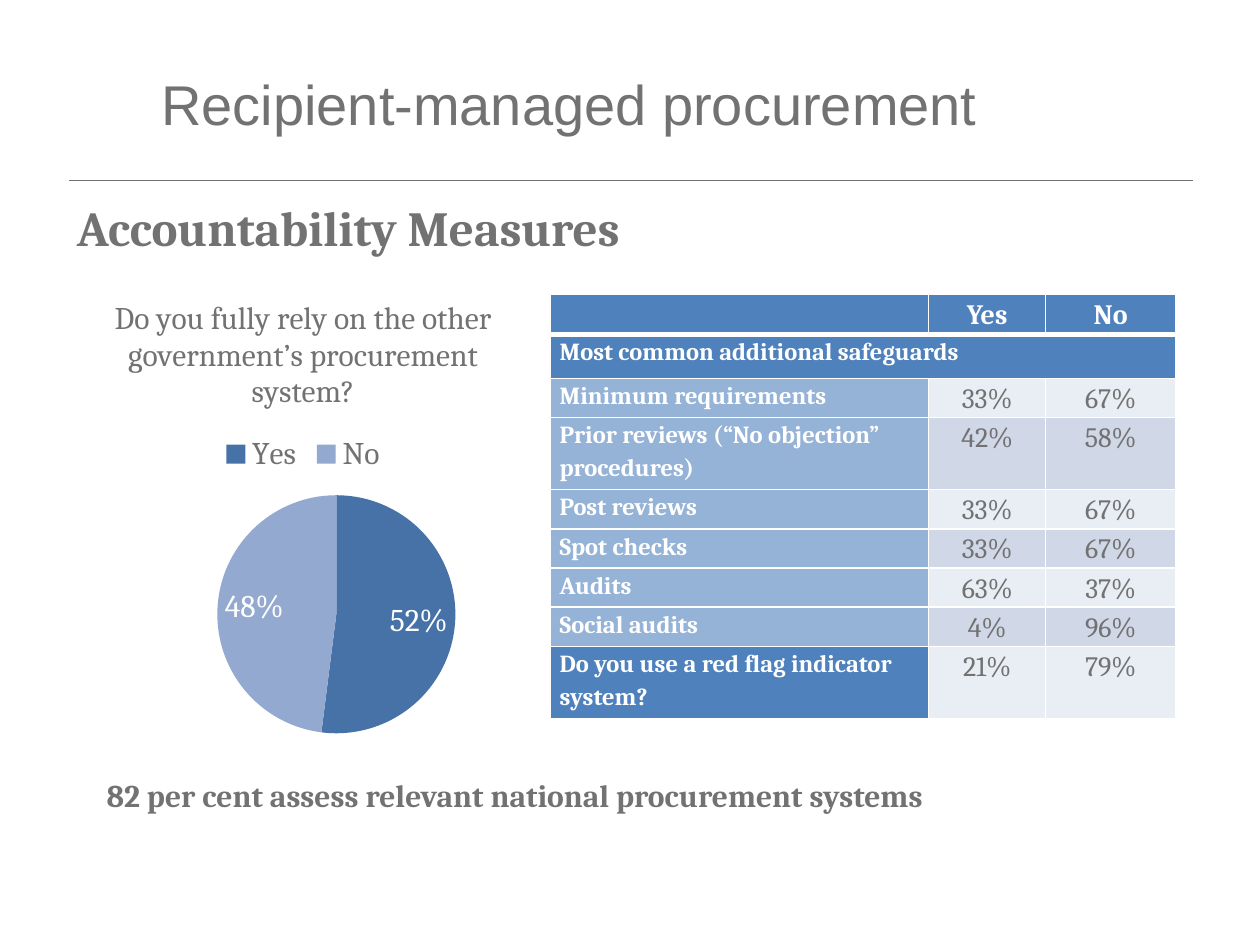
from lxml import etree
from pptx import Presentation
from pptx.chart.data import CategoryChartData
from pptx.dml.color import RGBColor
from pptx.enum.chart import XL_CHART_TYPE, XL_LABEL_POSITION, XL_LEGEND_POSITION
from pptx.enum.shapes import MSO_CONNECTOR
from pptx.enum.text import MSO_ANCHOR, PP_ALIGN
from pptx.oxml import parse_xml
from pptx.oxml.ns import nsdecls, qn
from pptx.util import Cm, Pt

GREY = RGBColor(0x72, 0x72, 0x72)
WHITE = RGBColor(0xFF, 0xFF, 0xFF)
BLUE = RGBColor(0x4F, 0x81, 0xBD)
LIGHT_BLUE = RGBColor(0x95, 0xB3, 0xD7)
BANDS = [RGBColor(0xE9, 0xED, 0xF4), RGBColor(0xD0, 0xD8, 0xE8)]
SLICES = [RGBColor(0x46, 0x72, 0xA8), RGBColor(0x93, 0xA9, 0xCF)]


def write(frame, text, size=18, font="Cambria", color=GREY, bold=False,
          align=PP_ALIGN.LEFT, spacing=None, after=None):
    paragraph = frame.paragraphs[0]
    paragraph.alignment = align
    if spacing:
        paragraph.line_spacing = spacing
    if after is not None:
        paragraph.space_after = Pt(after)
    span = paragraph.add_run()
    span.text = text
    span.font.size = Pt(size)
    span.font.name = font
    span.font.color.rgb = color
    span.font.bold = bold


def draw_borders(cell, heavy_bottom):
    """Give the cell white edges, with a thick lower edge under the header."""
    properties = cell._tc.get_or_add_tcPr()
    for index, side in enumerate("LRTB"):
        width = Pt(3) if side == "B" and heavy_bottom else Pt(1)
        properties.insert(index, parse_xml(
            f'<a:ln{side} {nsdecls("a")} w="{width}"><a:solidFill>'
            f'<a:srgbClr val="{WHITE}"/></a:solidFill></a:ln{side}>'))


deck = Presentation()
deck.slide_width, deck.slide_height = Cm(25.4), Cm(19.05)
page = deck.slides.add_slide(deck.slide_layouts[6])

rule = page.shapes.add_connector(
    MSO_CONNECTOR.STRAIGHT, Cm(1.4), Cm(3.63), Cm(24.05), Cm(3.63))
rule.line.color.rgb = GREY
rule.line.width = Pt(0.5)
etree.SubElement(rule._element.spPr, qn("a:effectLst"))

# Safeguards table
rows = [
    ("", "Yes", "No"),
    ("Most common additional safeguards", "", ""),
    ("Minimum requirements", "33%", "67%"),
    ("Prior reviews (“No objection” procedures)", "42%", "58%"),
    ("Post reviews", "33%", "67%"),
    ("Spot checks", "33%", "67%"),
    ("Audits", "63%", "37%"),
    ("Social audits", "4%", "96%"),
    ("Do you use a red flag indicator system?", "21%", "79%"),
]
heights = [0.81, 0.89, 0.79, 1.45, 0.79, 0.79, 0.79, 0.79, 1.45]
widths = [7.62, 2.36, 2.62]
table = page.shapes.add_table(
    len(rows), len(widths), Cm(11.1), Cm(5.93),
    Cm(sum(widths)), Cm(sum(heights))).table
for column, width in zip(table.columns, widths):
    column.width = Cm(width)
for row, height in zip(table.rows, heights):
    row.height = Cm(height)
table.cell(1, 0).merge(table.cell(1, 2))

last = len(rows) - 1
for r, texts in enumerate(rows):
    for c, text in enumerate(texts):
        cell = table.cell(r, c)
        heading = r < 2 or c == 0
        cell.margin_left = cell.margin_right = Cm(0.18)
        cell.margin_top = cell.margin_bottom = 0
        cell.fill.solid()
        if r in (0, 1) or (r == last and c == 0):
            cell.fill.fore_color.rgb = BLUE
        else:
            cell.fill.fore_color.rgb = LIGHT_BLUE if c == 0 else BANDS[r % 2]
        draw_borders(cell, heavy_bottom=r == 0)
        if not cell.is_spanned:
            write(cell.text_frame, text,
                  size=14 if c == 0 and r else 16,
                  color=WHITE if heading else GREY, bold=heading,
                  align=PP_ALIGN.CENTER if c else PP_ALIGN.LEFT,
                  spacing=1.15, after=4 if c == 0 and 1 < r < last else 10)

# Pie chart
question = "Do you fully rely on the other government’s procurement system?"
data = CategoryChartData()
data.categories = ["Yes", "No"]
data.add_series(question, (52, 48))
chart = page.shapes.add_chart(
    XL_CHART_TYPE.PIE, Cm(0.51), Cm(5.54), Cm(11.2), Cm(9.6), data).chart
chart.font.size = Pt(18)
chart.font.name = "Cambria"
chart.font.color.rgb = GREY
chart.has_title = True
write(chart.chart_title.text_frame, question, align=PP_ALIGN.CENTER)
chart.chart_title.include_in_layout = False
chart.has_legend = True
chart.legend.position = XL_LEGEND_POSITION.TOP
chart.legend.include_in_layout = False

plot = chart.plots[0]
for index, color in enumerate(SLICES):
    fill = plot.series[0].points[index].format.fill
    fill.solid()
    fill.fore_color.rgb = color
plot.has_data_labels = True
labels = plot.data_labels
labels.show_percentage = True
labels.show_value = False
labels.number_format = "0%"
labels.number_format_is_linked = False
labels.position = XL_LABEL_POSITION.INSIDE_END
labels.font.size = Pt(18)
labels.font.name = "Cambria"
labels.font.color.rgb = WHITE

area = chart._chartSpace.chart.plotArea
for old in area.findall(qn("c:layout")):
    area.remove(old)
area.insert(0, parse_xml(
    f'<c:layout {nsdecls("c")}><c:manualLayout><c:layoutTarget val="inner"/>'
    '<c:xMode val="edge"/><c:yMode val="edge"/><c:x val="0.345"/>'
    '<c:y val="0.463"/><c:w val="0.43"/><c:h val="0.5"/>'
    '</c:manualLayout></c:layout>'))

# Title, heading and closing line
for text, left, top, width, height, wrap, style in [
    ("Recipient-managed procurement", 3, 0.66, 20.6, 2.84, True,
     {"size": 32, "font": "Arial"}),
    ("Accountability Measures", 1.3, 3.86, 13.18, 1.45, False,
     {"size": 28, "bold": True}),
    ("82 per cent assess relevant national procurement systems",
     1.9, 15.52, 19.56, 1.02, False, {"bold": True}),
]:
    box = page.shapes.add_textbox(Cm(left), Cm(top), Cm(width), Cm(height))
    box.text_frame.word_wrap = wrap
    box.text_frame.vertical_anchor = MSO_ANCHOR.MIDDLE if wrap else MSO_ANCHOR.TOP
    write(box.text_frame, text, **style)

deck.save("out.pptx")
